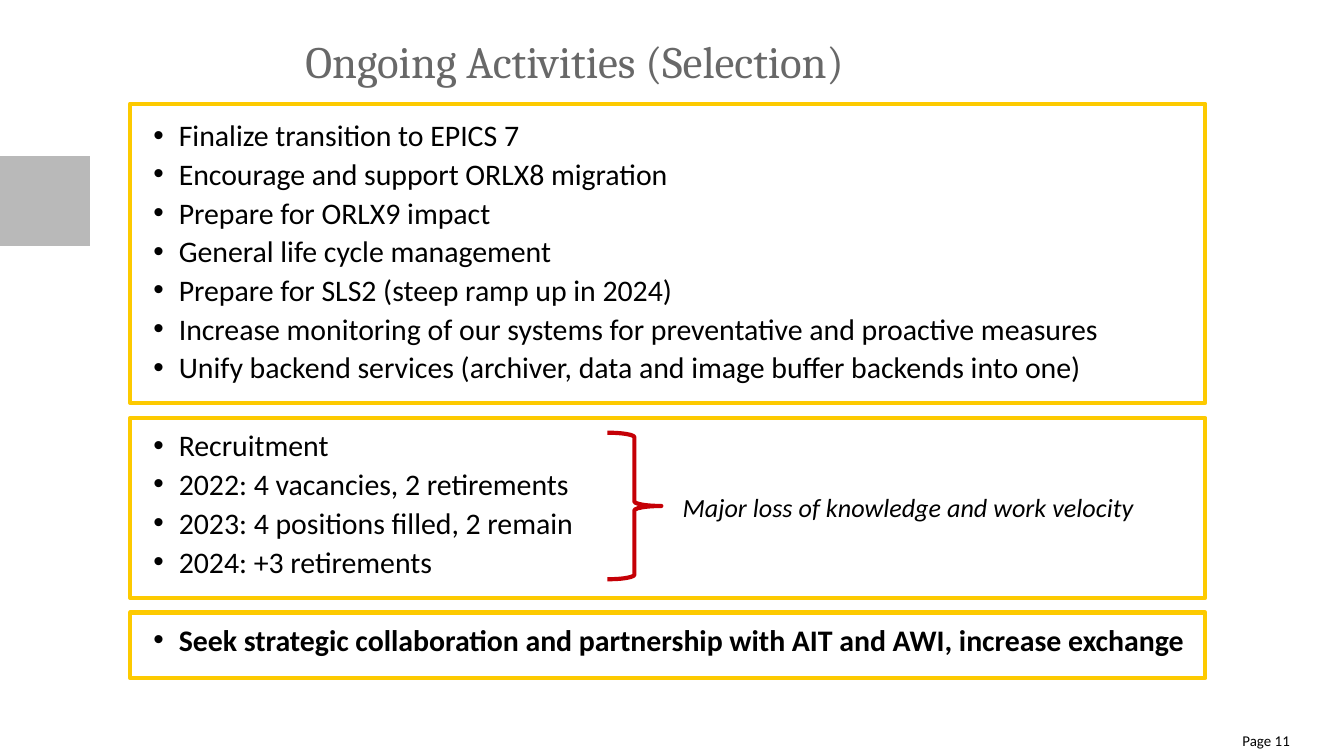
import pptx
import pptx.dml.color
import pptx.enum.shapes
import pptx.enum.text
import pptx.oxml
import pptx.oxml.ns
import pptx.util

Cm = pptx.util.Cm
Pt = pptx.util.Pt
RGBColor = pptx.dml.color.RGBColor
MSO_SHAPE = pptx.enum.shapes.MSO_SHAPE
PP_ALIGN = pptx.enum.text.PP_ALIGN
MSO_ANCHOR = pptx.enum.text.MSO_ANCHOR

BLACK = RGBColor(0x00, 0x00, 0x00)
TITLE_GREY = RGBColor(0x68, 0x68, 0x68)
MARGIN_GREY = RGBColor(0xB9, 0xB9, 0xB9)
YELLOW = RGBColor(0xFD, 0xCA, 0x00)
RED = RGBColor(0xC5, 0x00, 0x06)

TITLE = "Ongoing Activities (Selection)"
CONSEQUENCE = "Major loss of knowledge and work velocity"
PAGE = "Page 11"

# Each group: frame height in cm, bold, activities
GROUPS = [
    (5.66, False, [
        "Finalize transition to EPICS 7",
        "Encourage and support ORLX8 migration",
        "Prepare for ORLX9 impact",
        "General life cycle management",
        "Prepare for SLS2 (steep ramp up in 2024)",
        "Increase monitoring of our systems for preventative and proactive measures",
        "Unify backend services (archiver, data and image buffer backends into one)",
    ]),
    (3.4, False, [
        "Recruitment",
        "2022: 4 vacancies, 2 retirements",
        "2023: 4 positions filled, 2 remain",
        "2024: +3 retirements",
    ]),
    (1.24, True, [
        "Seek strategic collaboration and partnership with AIT and AWI, increase exchange",
    ]),
]

FRAME_LEFT, FRAME_TOP, FRAME_WIDTH, FRAME_GAP = 2.46, 1.96, 20.32, 0.28
BULLET_INDENT = Cm(0.48)
LINE_SPACING = 1.08
GROUP_SPACE = Pt(21.1)


def add_outline(slide, preset, left, top, width, height, color):
    shape = slide.shapes.add_shape(preset, Cm(left), Cm(top), Cm(width), Cm(height))
    shape.shadow.inherit = False
    shape.fill.background()
    shape.line.color.rgb = color
    shape.line.width = Pt(2.25)


def add_text_frame(slide, left, top, width, height, anchor=MSO_ANCHOR.MIDDLE):
    box = slide.shapes.add_textbox(Cm(left), Cm(top), Cm(width), Cm(height))
    frame = box.text_frame
    frame.margin_left = frame.margin_right = 0
    frame.margin_top = frame.margin_bottom = 0
    frame.word_wrap = True
    frame.vertical_anchor = anchor
    return frame


def add_run(paragraph, text, size, font="Calibri", color=BLACK, bold=False, italic=False):
    run = paragraph.add_run()
    run.text = text
    run.font.name = font
    run.font.size = Pt(size)
    run.font.color.rgb = color
    run.font.bold = bold
    run.font.italic = italic


def add_bullet(paragraph):
    properties = paragraph._p.get_or_add_pPr()
    properties.set("marL", str(BULLET_INDENT))
    properties.set("indent", str(-BULLET_INDENT))
    namespace = pptx.oxml.ns.nsdecls("a")
    for element in (
        f'<a:buClr {namespace}><a:srgbClr val="{BLACK}"/></a:buClr>',
        f'<a:buFont {namespace} typeface="Arial"/>',
        f'<a:buChar {namespace} char="•"/>',
    ):
        properties.append(pptx.oxml.parse_xml(element))


def add_activities(slide):
    frame = add_text_frame(slide, 2.9, 2.16, 21.51, 10.39, MSO_ANCHOR.TOP)
    paragraph = frame.paragraphs[0]
    for group_index, (_, bold, activities) in enumerate(GROUPS):
        for index, activity in enumerate(activities):
            if group_index or index:
                paragraph = frame.add_paragraph()
            add_bullet(paragraph)
            paragraph.line_spacing = LINE_SPACING
            if group_index and index == 0:
                paragraph.space_before = GROUP_SPACE
            add_run(paragraph, activity, 16, bold=bold)


def add_group_frames(slide):
    top = FRAME_TOP
    for height, _, _ in GROUPS:
        add_outline(slide, MSO_SHAPE.RECTANGLE, FRAME_LEFT, top, FRAME_WIDTH, height, YELLOW)
        top += height + FRAME_GAP


def main():
    presentation = pptx.Presentation()
    presentation.slide_width = Cm(25.4)
    presentation.slide_height = Cm(14.29)
    slide = presentation.slides.add_slide(presentation.slide_layouts[6])

    margin_mark = slide.shapes.add_shape(MSO_SHAPE.RECTANGLE, 0, Cm(2.95), Cm(1.7), Cm(1.7))
    margin_mark.shadow.inherit = False
    margin_mark.fill.solid()
    margin_mark.fill.fore_color.rgb = MARGIN_GREY
    margin_mark.line.fill.background()

    add_activities(slide)

    title = add_text_frame(slide, 5.77, 0.61, 18.64, 1.07).paragraphs[0]
    add_run(title, TITLE, 24, font="Cambria", color=TITLE_GREY)

    page = add_text_frame(slide, 22.78, 13.79, 1.6, 0.41).paragraphs[0]
    page.alignment = PP_ALIGN.RIGHT
    add_run(page, PAGE, 8)

    add_group_frames(slide)
    add_outline(slide, MSO_SHAPE.RIGHT_BRACE, 11.48, 8.18, 1.02, 2.77, RED)

    consequence = add_text_frame(slide, 12.9, 9.19, 9.17, 0.74).paragraphs[0]
    consequence.line_spacing = 1.1
    add_run(consequence, CONSEQUENCE, 14, italic=True)

    presentation.save("out.pptx")


if __name__ == "__main__":
    main()
